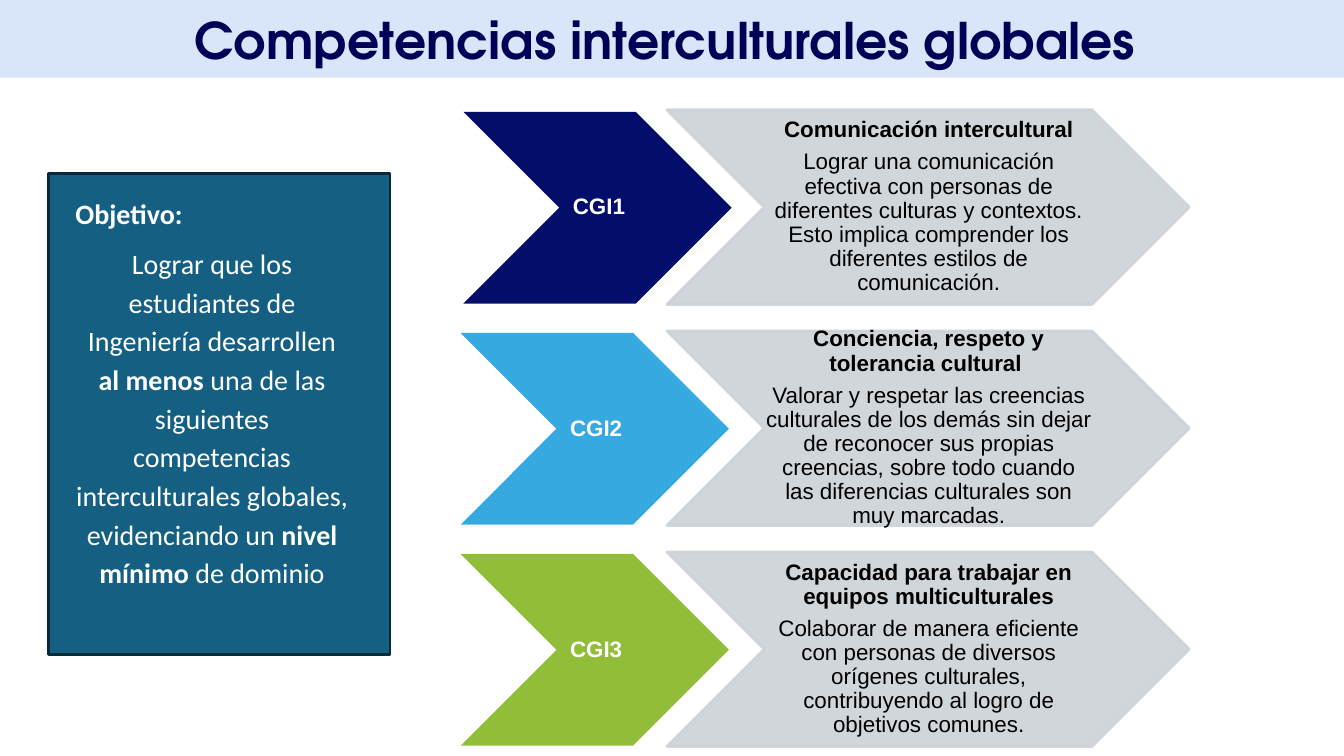
import pptx
import pptx.util
import pptx.dml.color
import pptx.enum.shapes
import pptx.enum.text
import pptx.oxml
import pptx.oxml.ns

Cm, Pt = pptx.util.Cm, pptx.util.Pt
SHAPE = pptx.enum.shapes.MSO_SHAPE
ALIGN = pptx.enum.text.PP_ALIGN
ANCHOR = pptx.enum.text.MSO_ANCHOR

COLORS = {
    "banner": "D9E5F8", "title": "000056", "panel": "156082", "panel_edge": "092A39",
    "navy": "020E6A", "sky": "36A9E1", "green": "92BD39",
    "grey": "CCD2D8", "white": "FFFFFF", "black": "000000",
}

COMPETENCIES = [
    ("CGI1", "navy", 11.68, "Comunicación intercultural",
     "Lograr una comunicación efectiva con personas de diferentes culturas y contextos. "
     "Esto implica comprender los diferentes estilos de comunicación."),
    ("CGI2", "sky", 11.61, "Conciencia, respeto y tolerancia cultural ",
     "Valorar y respetar las creencias culturales de los demás sin dejar de reconocer sus "
     "propias creencias, sobre todo cuando las diferencias culturales son muy marcadas."),
    ("CGI3", "green", 11.61, "Capacidad para trabajar en equipos multiculturales",
     "Colaborar de manera eficiente con personas de diversos orígenes culturales, "
     "contribuyendo al logro de objetivos comunes."),
]
FIRST_TOP, PITCH = 2.82, 5.57

OBJECTIVE = [
    ("Lograr que los estudiantes de Ingeniería desarrollen ", False),
    ("al menos ", True),
    ("una de las siguientes competencias interculturales globales, evidenciando un ", False),
    ("nivel mínimo", True),
    (" de dominio", False),
]


def rgb(name):
    return pptx.dml.color.RGBColor.from_string(COLORS[name])


class Deck:
    def __init__(self):
        self.prs = pptx.Presentation()
        self.prs.slide_width, self.prs.slide_height = Cm(33.87), Cm(19.05)
        self.s = self.prs.slides.add_slide(self.prs.slide_layouts[6])

    def shape(self, kind, box, fill, line=None, opacity=None):
        sp = self.s.shapes.add_shape(kind, *map(Cm, box))
        sp.shadow.inherit = False
        sp.fill.solid()
        sp.fill.fore_color.rgb = rgb(fill)
        if line:
            sp.line.color.rgb = rgb(line)
            sp.line.width = Pt(2)
        else:
            sp.line.fill.background()
        if opacity:
            for color in sp._element.spPr.iter(pptx.oxml.ns.qn("a:srgbClr")):
                alpha = pptx.oxml.parse_xml(
                    f'<a:alpha {pptx.oxml.ns.nsdecls("a")} val="{opacity * 1000}"/>')
                color.append(alpha)
        return sp

    def set_text(self, sp, paragraphs, font, size, color, anchor=ANCHOR.MIDDLE,
                 spacing=1.0, after=0, insets=(0.25, 0.13, 0.25, 0.13)):
        """Fill sp with paragraphs, each an alignment and a list of (text, bold) runs."""
        tf = sp.text_frame
        tf.word_wrap = True
        tf.vertical_anchor = anchor
        tf.margin_left, tf.margin_top, tf.margin_right, tf.margin_bottom = map(Cm, insets)
        for i, (align, runs) in enumerate(paragraphs):
            p = tf.add_paragraph() if i else tf.paragraphs[0]
            p.alignment = align
            p.line_spacing = spacing
            p.space_after = Pt(after)
            for text, bold in runs:
                r = p.add_run()
                r.text = text
                r.font.name, r.font.size, r.font.bold = font, Pt(size), bold
                r.font.color.rgb = rgb(color)

    def textbox(self, box, paragraphs, font, size, color, **layout):
        sp = self.s.shapes.add_textbox(*map(Cm, box))
        self.set_text(sp, paragraphs, font, size, color, **layout)

    def chevron_label(self, box, runs, color):
        """Centred label over a chevron, one paragraph per run."""
        self.textbox(box, [(ALIGN.CENTER, [run]) for run in runs], "Arial", 16, color,
                     spacing=0.9, after=5.6, insets=(0.05, 0.03, 0, 0.03))

    def competency(self, top, code, fill, left, heading, description):
        self.shape(SHAPE.CHEVRON, (left, top, 6.76, 4.83), fill)
        self.chevron_label((left + 2.41, top, 1.96, 4.83), [(code, True)], "white")
        top -= 0.05
        self.shape(SHAPE.CHEVRON, (16.81, top, 13.16, 4.9), "grey", "grey", opacity=90)
        self.chevron_label((19.25, top, 8.26, 4.9),
                           [(heading, True), (description, False)], "black")


def main():
    deck = Deck()
    deck.shape(SHAPE.RECTANGLE, (1.22, 4.37, 8.61, 12.12), "panel", "panel_edge")
    banner = deck.shape(SHAPE.RECTANGLE, (0, 0, 33.87, 1.96), "banner")
    deck.set_text(banner, [(ALIGN.CENTER, [("Competencias interculturales globales ", True)])],
                  "TeX Gyre Adventor", 36, "title")
    deck.textbox((1.65, 4.7, 7.39, 11.3),
                 [(ALIGN.LEFT, [("Objetivo:", True)]), (ALIGN.CENTER, OBJECTIVE)],
                 "Calibri", 20, "white", anchor=ANCHOR.TOP, spacing=1.15, after=8)
    for row, competency in enumerate(COMPETENCIES):
        deck.competency(FIRST_TOP + row * PITCH, *competency)
    deck.prs.save("out.pptx")


if __name__ == "__main__":
    main()
